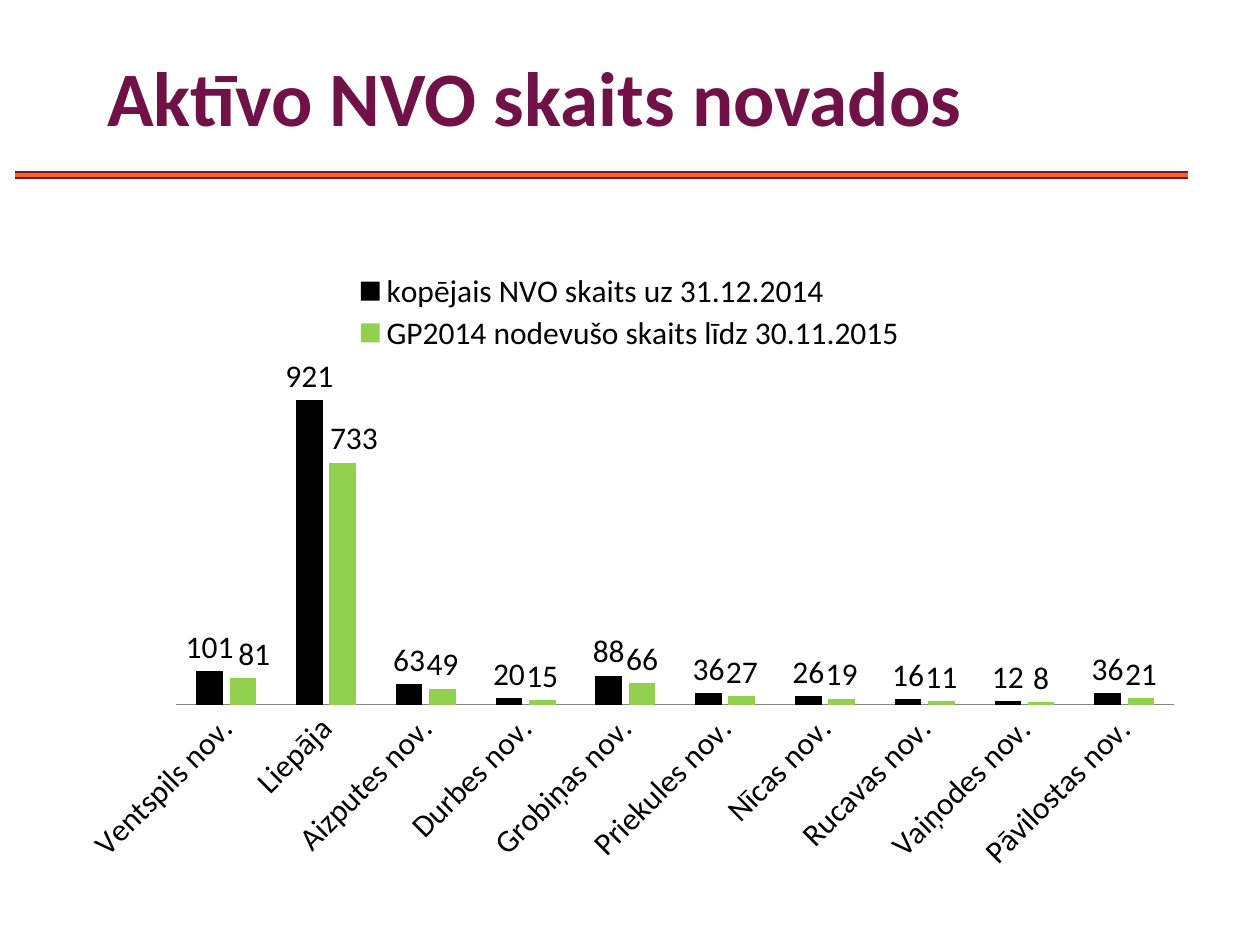
from lxml.etree import SubElement
from pptx import Presentation
from pptx.chart.data import CategoryChartData
from pptx.dml.color import RGBColor
from pptx.enum.chart import (XL_CHART_TYPE as ChartType, XL_LABEL_POSITION as LabelPosition,
                             XL_LEGEND_POSITION as LegendPosition, XL_TICK_MARK as TickMark)
from pptx.enum.shapes import MSO_CONNECTOR as Connector
from pptx.enum.text import MSO_ANCHOR as Anchor, PP_ALIGN as Align
from pptx.oxml import parse_xml
from pptx.oxml.ns import nsdecls, qn
from pptx.util import Pt

FONT = "Calibri"
PLUM, ORANGE, BLACK, GREEN, GREY = "701248", "FC6410", "000000", "92D050", "868686"
DISTRICTS = ["Ventspils nov.", "Liepāja", "Aizputes nov.", "Durbes nov.", "Grobiņas nov.",
             "Priekules nov.", "Nīcas nov.", "Rucavas nov.", "Vaiņodes nov.", "Pāvilostas nov."]
SERIES = [
    ("kopējais NVO skaits uz 31.12.2014", BLACK, [101, 921, 63, 20, 88, 36, 26, 16, 12, 36]),
    ("GP2014 nodevušo skaits līdz 30.11.2015", GREEN, [81, 733, 49, 15, 66, 27, 19, 11, 8, 21]),
]
SHIFTED_LABELS = [0, 1]


def color(hex_string):
    """Return the colour for a hex string."""
    return RGBColor.from_string(hex_string)


def style_font(font, size, hex_string, bold=False):
    """Set the face, size, colour and weight of a font."""
    font.name, font.size, font.bold = FONT, Pt(size), bold
    font.color.rgb = color(hex_string)


def manual_layout(target=None, **fractions):
    """Return a chart layout element from fractions of the chart area."""
    parts = f'<c:layoutTarget val="{target}"/>' if target else ""
    if "w" in fractions:
        parts += '<c:xMode val="edge"/><c:yMode val="edge"/>'
    parts += "".join(f'<c:{name} val="{value}"/>' for name, value in fractions.items())
    return parse_xml(f'<c:layout {nsdecls("c")}><c:manualLayout>{parts}</c:manualLayout></c:layout>')


def place_layout(element, layout, after=None):
    """Put a layout first in an element, or after a named child, replacing any other."""
    for old in element.findall(qn("c:layout")):
        element.remove(old)
    position = element.index(element.find(qn(after))) + 1 if after else 0
    element.insert(position, layout)


def add_title(slide, left, top, width, height):
    """Place the slide title in the given box."""
    title = slide.shapes.title
    title.left, title.top, title.width, title.height = Pt(left), Pt(top), Pt(width), Pt(height)
    title.text_frame.text = "Aktīvo NVO skaits novados"
    title.text_frame.vertical_anchor = Anchor.MIDDLE
    paragraph = title.text_frame.paragraphs[0]
    paragraph.alignment = Align.LEFT
    style_font(paragraph.font, 44, PLUM, bold=True)


def add_rule(slide, left, top, width):
    """Draw the two-coloured rule below the title."""
    for hex_string, weight in ((PLUM, 4.5), (ORANGE, 2.25)):
        line = slide.shapes.add_connector(Connector.STRAIGHT, Pt(left), Pt(top), Pt(left + width), Pt(top))
        line.line.color.rgb = color(hex_string)
        line.line.width = Pt(weight)
        SubElement(line.element.spPr, qn("a:effectLst"))


def add_district_chart(slide, left, top, width, height):
    """Place the column chart of organisations by district in the given box."""
    data = CategoryChartData()
    data.categories = DISTRICTS
    for name, _, values in SERIES:
        data.add_series(name, values)
    chart = slide.shapes.add_chart(ChartType.COLUMN_CLUSTERED, Pt(left), Pt(top),
                                   Pt(width), Pt(height), data).chart
    style_font(chart.font, 18, BLACK)
    chart.has_title = False
    chart.has_legend = True
    chart.legend.position = LegendPosition.TOP
    chart.legend.include_in_layout = False
    place_layout(chart.element.find(".//" + qn("c:legend")),
                 manual_layout(x=0.25, y=0.02, w=0.5, h=0.14), "c:legendPos")
    place_layout(chart.element.find(".//" + qn("c:plotArea")),
                 manual_layout("inner", x=0.1, y=0.19, w=0.88, h=0.53))

    value_axis, category_axis = chart.value_axis, chart.category_axis
    value_axis.visible = value_axis.has_major_gridlines = False
    value_axis.minimum_scale, value_axis.maximum_scale = 0, 1000
    category_axis.major_tick_mark = category_axis.minor_tick_mark = TickMark.NONE
    category_axis.format.line.color.rgb = color(GREY)
    style_font(category_axis.tick_labels.font, 18, BLACK)
    axis_text = chart.element.find(".//" + qn("c:catAx")).find(qn("c:txPr"))
    axis_text.find(qn("a:bodyPr")).set("rot", "-2700000")

    plot = chart.plots[0]
    plot.gap_width, plot.overlap, plot.vary_by_categories = 150, -25, False
    for series, (_, hex_string, _) in zip(plot.series, SERIES):
        series.format.fill.solid()
        series.format.fill.fore_color.rgb = color(hex_string)
        series.invert_if_negative = False
        series.data_labels.show_value = True
        series.data_labels.position = LabelPosition.OUTSIDE_END
    for index in SHIFTED_LABELS:
        plot.series[1].points[index].data_label.position = LabelPosition.OUTSIDE_END
    for label in chart.element.iter(qn("c:dLbl")):
        place_layout(label, manual_layout(x=0.01, y=0), "c:idx")


def main():
    """Build the slide and save it."""
    presentation = Presentation()
    presentation.slide_width, presentation.slide_height = Pt(720), Pt(540)
    slide = presentation.slides.add_slide(presentation.slide_layouts[5])
    add_rule(slide, 8.6, 100, 670.4)
    add_title(slide, 54, 9.4, 625, 90.7)
    add_district_chart(slide, 36, 146.2, 648, 356.4)
    presentation.save("out.pptx")


if __name__ == "__main__":
    main()
